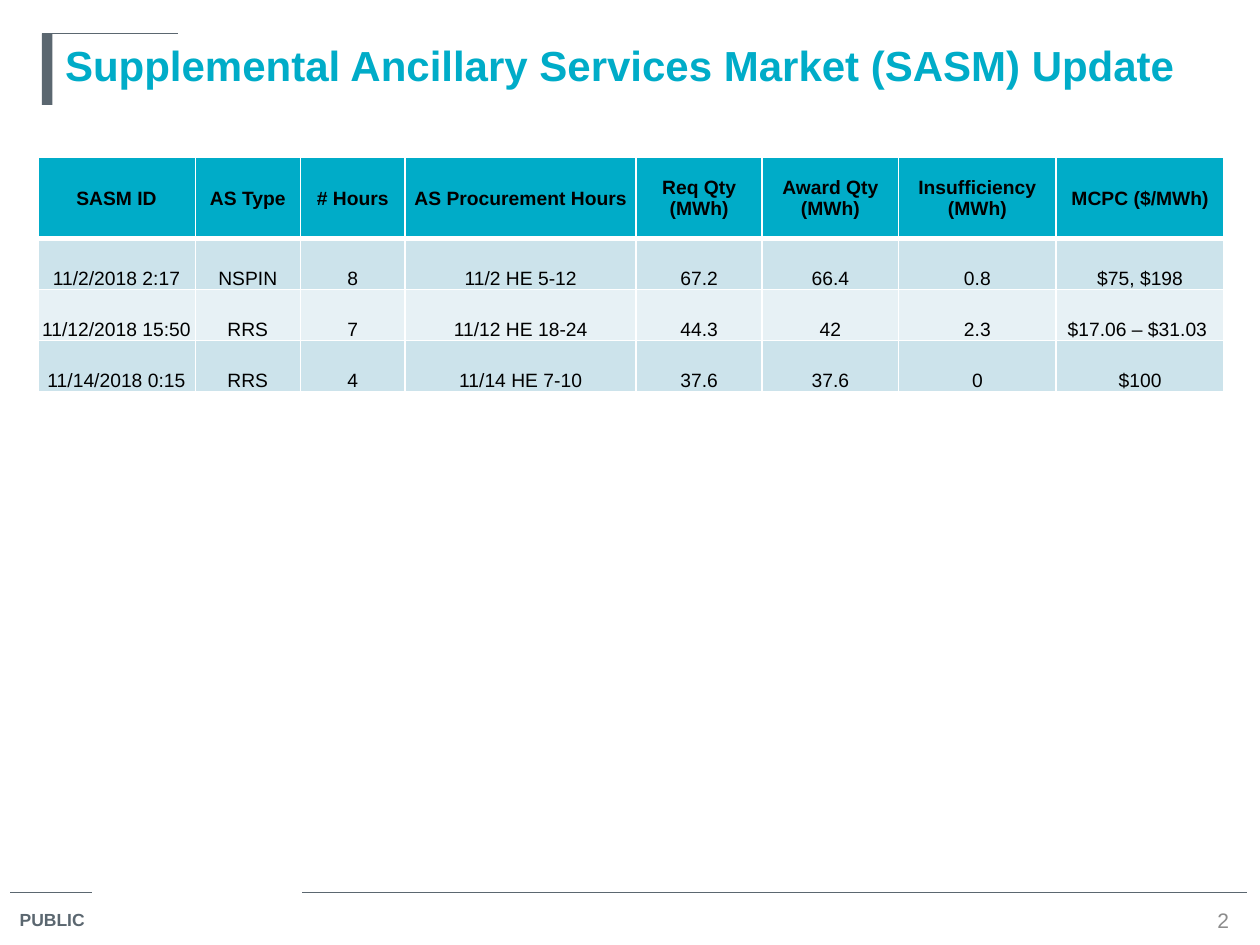
from lxml.etree import SubElement
from pptx import Presentation
from pptx.dml.color import RGBColor
from pptx.enum.shapes import MSO_CONNECTOR, MSO_SHAPE
from pptx.enum.text import MSO_ANCHOR, PP_ALIGN
from pptx.oxml.ns import qn
from pptx.util import Inches, Pt

TEAL = RGBColor(0x00, 0xAC, 0xC8)
SLATE = RGBColor(0x5B, 0x67, 0x70)
GREY = RGBColor(0x8C, 0x8C, 0x8C)
BLACK = RGBColor(0x00, 0x00, 0x00)
WHITE = RGBColor(0xFF, 0xFF, 0xFF)
BANDS = (RGBColor(0xCC, 0xE3, 0xEB), RGBColor(0xE7, 0xF1, 0xF5))

COLS = (15, 10, 10, 22, 12, 13, 15, 16)
ROWS = (7.7, 4.87, 4.87, 4.87)
DATA = (
    ("SASM ID", "AS Type", "# Hours", "AS Procurement Hours", "Req Qty\v(MWh)",
     "Award Qty\v(MWh)", "Insufficiency\v(MWh)", "MCPC ($/MWh)"),
    ("11/2/2018 2:17", "NSPIN", "8", "11/2 HE 5-12", "67.2", "66.4", "0.8", "$75, $198"),
    ("11/12/2018 15:50", "RRS", "7", "11/12 HE 18-24", "44.3", "42", "2.3", "$17.06 – $31.03 "),
    ("11/14/2018 0:15", "RRS", "4", "11/14 HE 7-10", "37.6", "37.6", "0", "$100"),
)


def put(item, values):
    """Set each attribute named in a dict of format values."""
    for name, value in values.items():
        setattr(item, name, value)


class Deck:
    """Hold the style and the current slide on a grid of 120 columns by 90 rows."""

    def __init__(self):
        """Open a deck with one title slide."""
        self.file = Presentation()
        put(self.file, {"slide_width": Inches(10), "slide_height": Inches(7.5)})
        self.unit = self.file.slide_width / 120
        self.slide = self.file.slides.add_slide(self.file.slide_layouts[5])
        self.shapes = self.slide.shapes

    def grid(self, *cells):
        """Turn grid cells into lengths."""
        return [round(cell * self.unit) for cell in cells]

    def text(self, frame, words, size, color, bold=False, align=PP_ALIGN.LEFT):
        """Fill a text frame with one formatted paragraph."""
        para = frame.paragraphs[0]
        para.text = words
        para.alignment = align
        for run in para.runs:
            put(run.font, {"name": "Arial", "size": Pt(size), "bold": bold})
            run.font.color.rgb = color
        for gap in para._p.findall(qn("a:br")):
            SubElement(gap, qn("a:rPr"), sz=str(size * 100))

    def title(self, words, *box):
        """Place the title placeholder."""
        shape = self.shapes.title
        put(shape, dict(zip(("left", "top", "width", "height"), self.grid(*box))))
        put(shape.text_frame, {"vertical_anchor": MSO_ANCHOR.TOP, "word_wrap": True})
        self.text(shape.text_frame, words, 24, TEAL, True)

    def label(self, words, box, size, color, form, **style):
        """Add a text box."""
        frame = self.shapes.add_textbox(*self.grid(*box)).text_frame
        put(frame, form)
        self.text(frame, words, size, color, **style)

    def rule(self, left, right, row):
        """Add a thin level line."""
        line = self.shapes.add_connector(
            MSO_CONNECTOR.STRAIGHT, *self.grid(left, row, right, row))
        line.line.color.rgb = SLATE
        line.line.width = Pt(0.75)
        SubElement(line._element.spPr, qn("a:effectLst"))

    def bar(self, *box):
        """Add a solid accent bar."""
        shape = self.shapes.add_shape(MSO_SHAPE.RECTANGLE, *self.grid(*box))
        shape.shadow.inherit = False
        shape.fill.solid()
        shape.fill.fore_color.rgb = SLATE
        shape.line.fill.background()

    def edge(self, cell, widths):
        """Draw white borders in the order left, right, top, bottom."""
        props = cell._tc.get_or_add_tcPr()
        for side, width in zip("LRTB", widths):
            line = SubElement(props, qn(f"a:ln{side}"), w=str(Pt(width)))
            fill = SubElement(line, qn("a:solidFill"))
            SubElement(fill, qn("a:srgbClr"), val=str(WHITE))

    def table(self, left, top, cols, rows, data):
        """Add a table with a header row and banded body rows."""
        box = self.grid(left, top, sum(cols), sum(rows))
        table = self.shapes.add_table(len(rows), len(cols), *box).table
        for col, width in zip(table.columns, self.grid(*cols)):
            col.width = width
        for row, height in zip(table.rows, self.grid(*rows)):
            row.height = height
        thin = Inches(0.01)
        for r, line in enumerate(data):
            head = r == 0
            for c, words in enumerate(line):
                cell = table.cell(r, c)
                put(cell, {
                    "margin_left": thin, "margin_right": thin,
                    "margin_top": thin, "margin_bottom": 0,
                    "vertical_anchor": MSO_ANCHOR.MIDDLE if head else MSO_ANCHOR.BOTTOM,
                })
                self.edge(cell, (1, 1, 3 if r == 1 else 1, 3 if head else 1))
                cell.fill.solid()
                cell.fill.fore_color.rgb = TEAL if head else BANDS[(r - 1) % 2]
                self.text(cell.text_frame, words, 11, BLACK, head, PP_ALIGN.CENTER)


def main():
    """Build the market update slide."""
    deck = Deck()
    deck.rule(1, 8.8, 85)
    deck.rule(28.8, 118.8, 85)
    deck.label("PUBLIC", (0.7, 86, 9.2, 3.4), 10, SLATE, {"word_wrap": False}, bold=True)
    deck.bar(4, 3.2, 1, 6.8)
    deck.rule(4, 17, 3.2)
    deck.title("Supplemental Ancillary Services Market (SASM) Update", 5, 3.2, 111, 15)
    deck.label("2", (115, 86.2, 3, 2.8), 12, GREY, {
        "margin_left": 0, "margin_right": 0, "margin_top": 0, "margin_bottom": 0,
        "word_wrap": True, "vertical_anchor": MSO_ANCHOR.MIDDLE,
    }, align=PP_ALIGN.CENTER)
    deck.table(3.6, 15, COLS, ROWS, DATA)
    deck.file.save("out.pptx")


if __name__ == "__main__":
    main()
